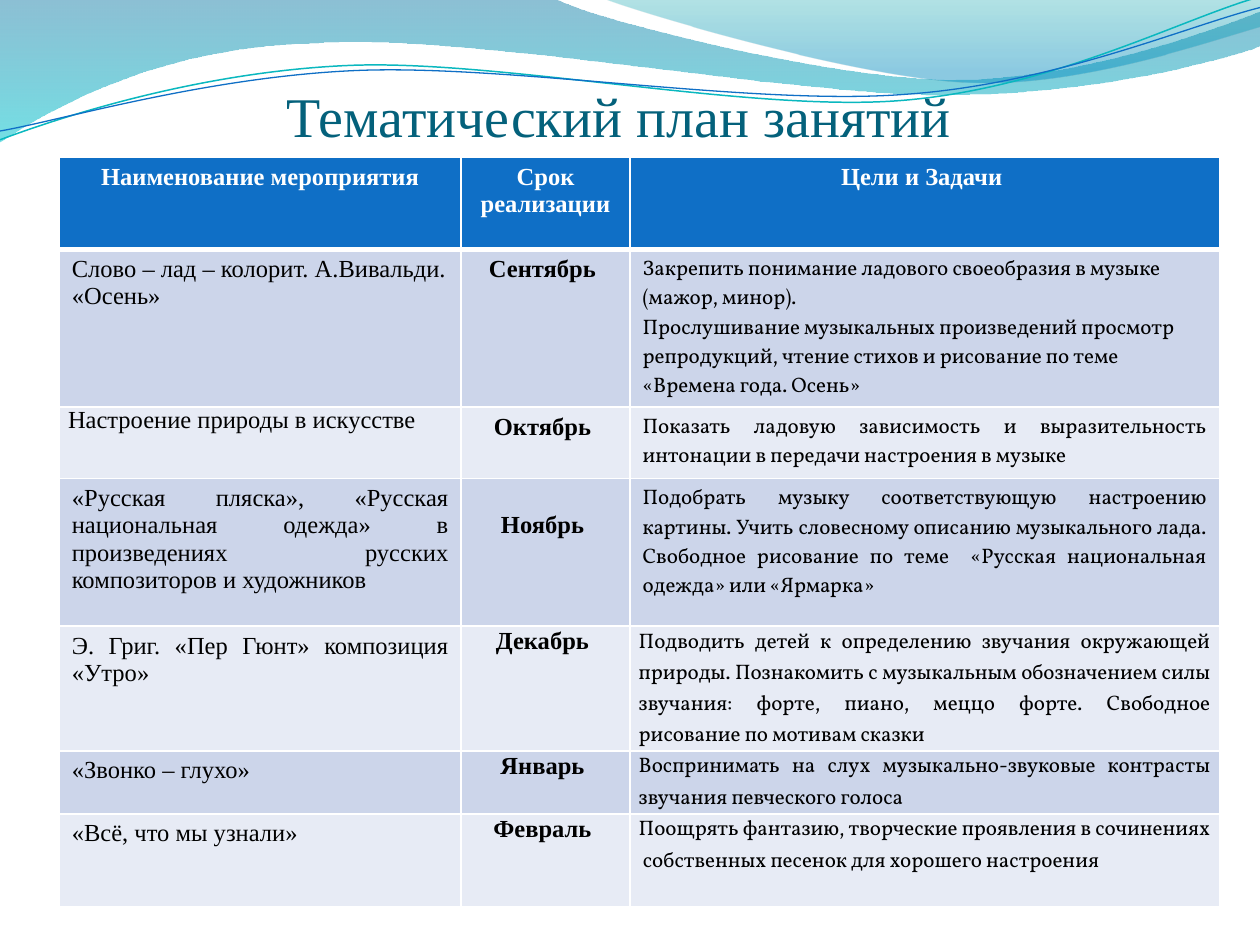
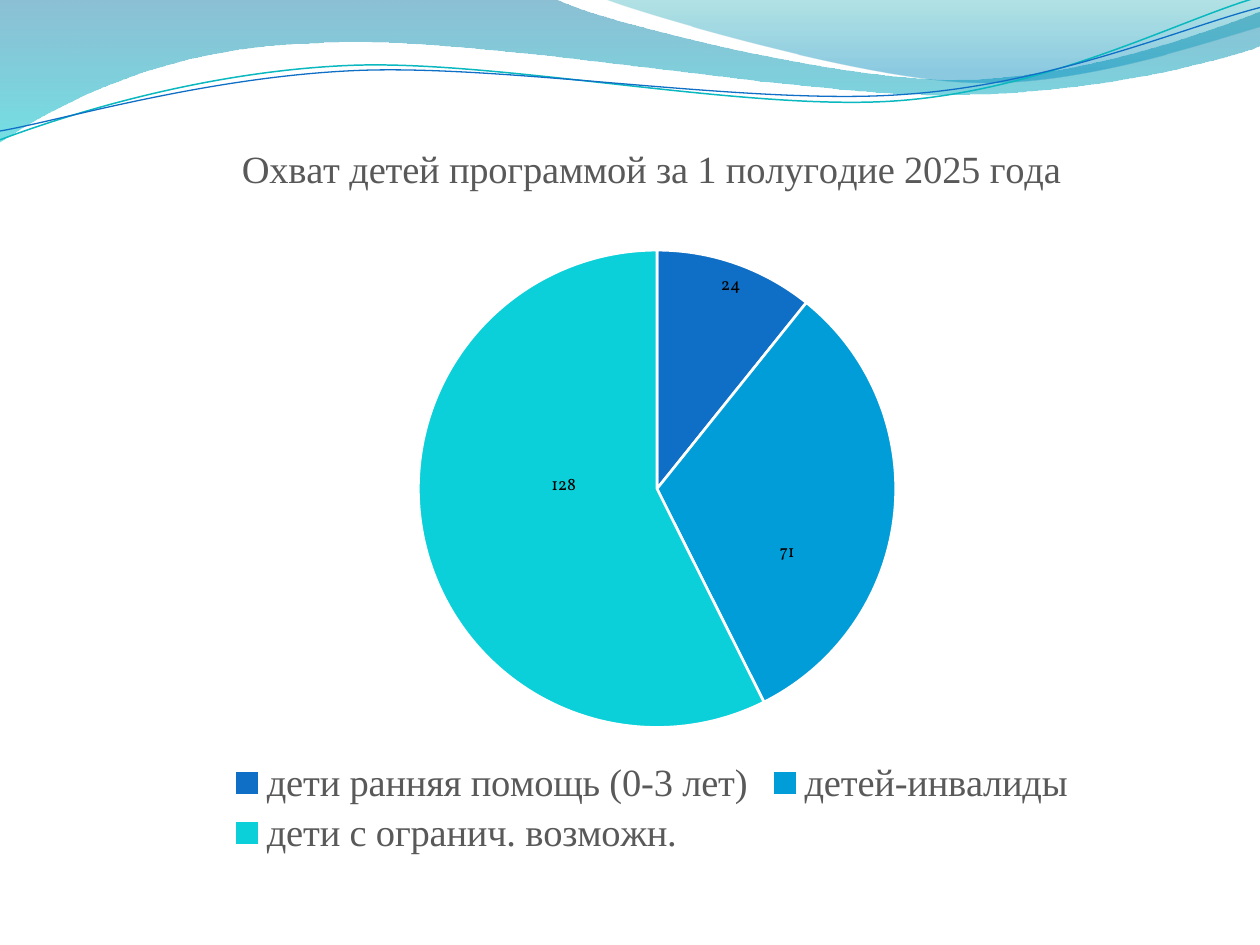
from lxml.etree import SubElement as Sub
from pptx import Presentation
from pptx.chart.data import CategoryChartData as Data
from pptx.dml.color import RGBColor
from pptx.enum.chart import XL_CHART_TYPE as Kind
from pptx.enum.chart import XL_LABEL_POSITION as Spot
from pptx.enum.chart import XL_LEGEND_POSITION as Side
from pptx.enum.text import MSO_ANCHOR as Anchor
from pptx.enum.text import PP_ALIGN as Align
from pptx.oxml.ns import qn
from pptx.util import Inches, Pt

WIDE, HIGH = Inches(10), Inches(7.5)
SERIF, BODY = "Times New Roman", "Vollkorn"
BLUE, WHITE, BLACK, GREY = "0F6FC6", "FFFFFF", "000000", "595959"
BANDS = ("E7EBF5", "CCD5EA")
HEAD = dict(name=SERIF, size=Pt(14), bold=True)
PLAIN = dict(HEAD, bold=False)
GOAL = dict(name=BODY, size=Pt(12), bold=False)
LEGEND = dict(name=SERIF, size=Pt(22), bold=False)

BACK = [(0, 0), (4.4, -.01), (4.76, .17, 6.64, .63, 7.58, .63),
        (8.53, .63, 9.58, .26, 10, .09), (10.01, .36),
        (9.83, .44, 8.7, .76, 7.46, .75), (6.22, .75, 3.82, .28, 2.57, .34),
        (1.29, .36, .46, .83, -.01, 1.13)]
FRONT = [(4.79, -.01), (5.09, .11, 6.82, .62, 7.69, .65),
         (8.56, .69, 9.61, .32, 10, .21), (10, 0)]
TEAL = [(0, 1.11), (.48, .93, 1.58, .57, 2.77, .52),
        (3.95, .47, 5.93, .89, 7.13, .8), (8.33, .71, 9.38, .15, 9.98, -.02)]
NAVY = [(0, 1.04), (.47, .96, 1.64, .61, 2.83, .56),
        (4.03, .51, 5.97, .84, 7.17, .75), (8.36, .67, 9.41, .21, 10, .06)]

COLS = (3.19, 1.34, 4.68)
ROWS = (.73, 1.25, .57, 1.17, .99, .5, .74)
TITLES = ("Наименование мероприятия", "Срок реализации", "Цели и Задачи ")
PLAN = [
    ("Слово – лад – колорит. А.Вивальди. «Осень»", "Сентябрь ",
     "Закрепить понимание ладового своеобразия в музыке (мажор, минор).\n"
     "Прослушивание музыкальных произведений просмотр репродукций, "
     "чтение стихов и рисование по теме «Времена года. Осень»"),
    ("Настроение природы в искусстве", "Октябрь ",
     "Показать ладовую зависимость и выразительность интонации "
     "в передачи настроения в музыке"),
    ("«Русская пляска», «Русская национальная одежда» в произведениях "
     "русских композиторов и художников", "Ноябрь ",
     "Подобрать музыку соответствующую настроению картины. Учить словесному "
     "описанию музыкального лада. Свободное рисование по теме  "
     "«Русская национальная одежда» или «Ярмарка»"),
    ("Э. Григ. «Пер Гюнт» композиция «Утро»", "Декабрь ",
     "Подводить детей к определению звучания окружающей природы. Познакомить "
     "с музыкальным обозначением силы звучания: форте, пиано, меццо форте. "
     "Свободное рисование по мотивам сказки"),
    ("«Звонко – глухо»", "Январь ",
     "Воспринимать на слух музыкально-звуковые контрасты звучания "
     "певческого голоса"),
    ("«Всё, что мы узнали»", "Февраль ",
     "Поощрять фантазию, творческие проявления в сочинениях  собственных "
     "песенок для хорошего настроения"),
]
PARTS = [("дети ранняя помощь (0-3 лет)", 24, BLUE, (.03, -.12)),
         ("детей-инвалиды", 71, "009DD9", (.01, .07)),
         ("дети с огранич. возможн.", 128, "0BD0D9", (.02, -.04))]


def col(num):
    """Return the length of num tenths of the slide's width."""
    return round(num * WIDE / 10)


def tint(code):
    """Return the colour for a hex string."""
    return RGBColor.from_string(code)


def put(item, **vals):
    """Set each given value on the item."""
    for key, val in vals.items():
        setattr(item, key, val)


def paint(fill, code):
    """Fill with one plain colour."""
    fill.solid()
    fill.fore_color.rgb = tint(code)


def ink(font, code, look):
    """Give a font its look and colour."""
    put(font, **look)
    font.color.rgb = tint(code)


def write(frame, text, code, look, **lay):
    """Write the lines of text with one look."""
    frame.text = text
    for par in frame.paragraphs:
        put(par, **lay)
        for run in par.runs:
            ink(run.font, code, look)


def bend(shape, steps):
    """Join the lines of each six-number step into one curve."""
    lines = iter(list(shape._element.iter(qn("a:lnTo"))))
    for step in steps:
        group = [next(lines) for _ in step[::2]]
        if len(group) == 3:
            arc = group[0].makeelement(qn("a:cubicBezTo"))
            group[0].addprevious(arc)
            for line in group:
                arc.append(line[0])
                line.getparent().remove(line)


def draw(slide, steps, close):
    """Draw a free outline without a shadow."""
    first, *rest = [(col(step[k]), col(step[k + 1]))
                    for step in steps for k in range(0, len(step), 2)]
    pen = slide.shapes.build_freeform(*first)
    pen.add_line_segments(rest, close=close)
    shape = pen.convert_to_shape()
    shape.shadow.inherit = False
    bend(shape, steps[1:])
    return shape


def wave(slide, steps, stops):
    """Draw a clear wave that fades downward."""
    shape = draw(slide, steps, True)
    shape.line.fill.background()
    shape.fill.gradient()
    shape.fill.gradient_angle = 270
    for stop, (place, code, _) in zip(shape.fill.gradient_stops, stops):
        stop.position = place
        stop.color.rgb = tint(code)
    for node, (_, _, share) in zip(shape._element.iter(qn("a:srgbClr")), stops):
        Sub(node, qn("a:alpha"), val=str(share * 1000))


def curve(slide, steps, code, size):
    """Draw a thin open curve."""
    shape = draw(slide, steps, False)
    shape.fill.background()
    shape.line.color.rgb = tint(code)
    shape.line.width = Pt(size)


def page(deck):
    """Add a slide with the shared waves."""
    slide = deck.slides.add_slide(deck.slide_layouts[6])
    wave(slide, BACK, [(0, "0074A1", 45), (1, "00C6CF", 55)])
    wave(slide, FRONT, [(0, "00A1A9", 30), (.8, "008BBF", 45)])
    curve(slide, TEAL, "0AB8BF", .85)
    curve(slide, NAVY, BLUE, .75)
    return slide


def title(slide, text):
    """Add the title above the table."""
    frame = slide.shapes.add_textbox(*map(col, (.47, .62, 9, .56))).text_frame
    put(frame, word_wrap=True, vertical_anchor=Anchor.BOTTOM, margin_left=0,
        margin_right=0, margin_top=col(.05), margin_bottom=0)
    write(frame, text, "04617B", dict(name=SERIF, size=Pt(32)),
          alignment=Align.CENTER)


def tight(cell):
    """Give a cell narrow margins."""
    put(cell, margin_left=col(.07), margin_right=col(.07),
        margin_top=0, margin_bottom=0)


def edge(cell, row):
    """Draw white borders, thick under the header."""
    props = cell._tc.get_or_add_tcPr()
    sizes = dict(L=1, R=1, T=3 if row == 1 else 1, B=1 if row else 3)
    for spot, (side, size) in enumerate(sizes.items()):
        line = Sub(props, qn("a:ln" + side), w=str(Pt(size)))
        Sub(Sub(line, qn("a:solidFill")), qn("a:srgbClr"), val=WHITE)
        props.insert(spot, line)


def grid(slide):
    """Add the table of the plan."""
    size = map(col, (.47, 1.25, sum(COLS), sum(ROWS)))
    table = slide.shapes.add_table(len(ROWS), len(COLS), *size).table
    for line, wide in zip(table.columns, COLS):
        line.width = col(wide)
    for line, high in zip(table.rows, ROWS):
        line.height = col(high)
    for j, text in enumerate(TITLES):
        cell = table.cell(0, j)
        paint(cell.fill, BLUE)
        edge(cell, 0)
        write(cell.text_frame, text, WHITE, HEAD, alignment=Align.CENTER)
    for i, row in enumerate(PLAN, 1):
        sides = (Align.LEFT if i < 3 else Align.JUSTIFY, Align.CENTER,
                 Align.LEFT if i == 1 else Align.JUSTIFY)
        for j, text in enumerate(row):
            cell = table.cell(i, j)
            paint(cell.fill, BANDS[i % 2])
            edge(cell, i)
            lay = dict(alignment=sides[j])
            if i > 3 and j:
                lay["line_spacing"] = 1.07
            if i > 3 and j or (i, j) == (2, 0):
                tight(cell)
            write(cell.text_frame, text, BLACK, (PLAIN, HEAD, GOAL)[j], **lay)
    table.cell(3, 1).margin_top = col(.26)


def place(node, spot, **vals):
    """Insert a manual layout into a chart part."""
    lay = node.find(qn("c:layout"))
    if lay is None:
        lay = Sub(node, qn("c:layout"))
        node.insert(spot, lay)
    man = Sub(lay, qn("c:manualLayout"))
    for key, val in vals.items():
        Sub(man, qn("c:" + key), val=str(val))


def pie(slide):
    """Add the pie chart of the children."""
    data = Data()
    data.categories = [part[0] for part in PARTS]
    data.add_series("Series 1", [part[1] for part in PARTS])
    size = map(col, (.67, .92, 9, 5.92))
    chart = slide.shapes.add_chart(Kind.PIE, *size, data).chart
    ink(chart.font, BLACK, dict(name=BODY, size=Pt(10)))
    write(chart.chart_title.text_frame,
          "Охват детей программой за 1 полугодие 2025 года", GREY, LEGEND)
    chart.has_legend = True
    put(chart.legend, position=Side.BOTTOM, include_in_layout=False)
    ink(chart.legend.font, GREY, LEGEND)
    plot = chart.plots[0]
    plot.vary_by_categories = True
    for num, (_, _, code, shift) in enumerate(PARTS):
        point = plot.series[0].points[num]
        paint(point.format.fill, code)
        point.format.line.color.rgb = tint(WHITE)
        point.format.line.width = Pt(1.5)
        label = point.data_label
        label.position = Spot.CENTER
        place(label._get_or_add_dLbl(), 1, x=shift[0], y=shift[1])
    area = chart._chartSpace.chart.plotArea
    place(area, 0, layoutTarget="inner", xMode="edge", yMode="edge",
          x=.29, y=.18, w=.43, h=.64)


def main():
    """Build and save both slides."""
    deck = Presentation()
    put(deck, slide_width=WIDE, slide_height=HIGH)
    plan = page(deck)
    title(plan, "Тематический план занятий ")
    grid(plan)
    pie(page(deck))
    deck.save("out.pptx")


if __name__ == "__main__":
    main()
